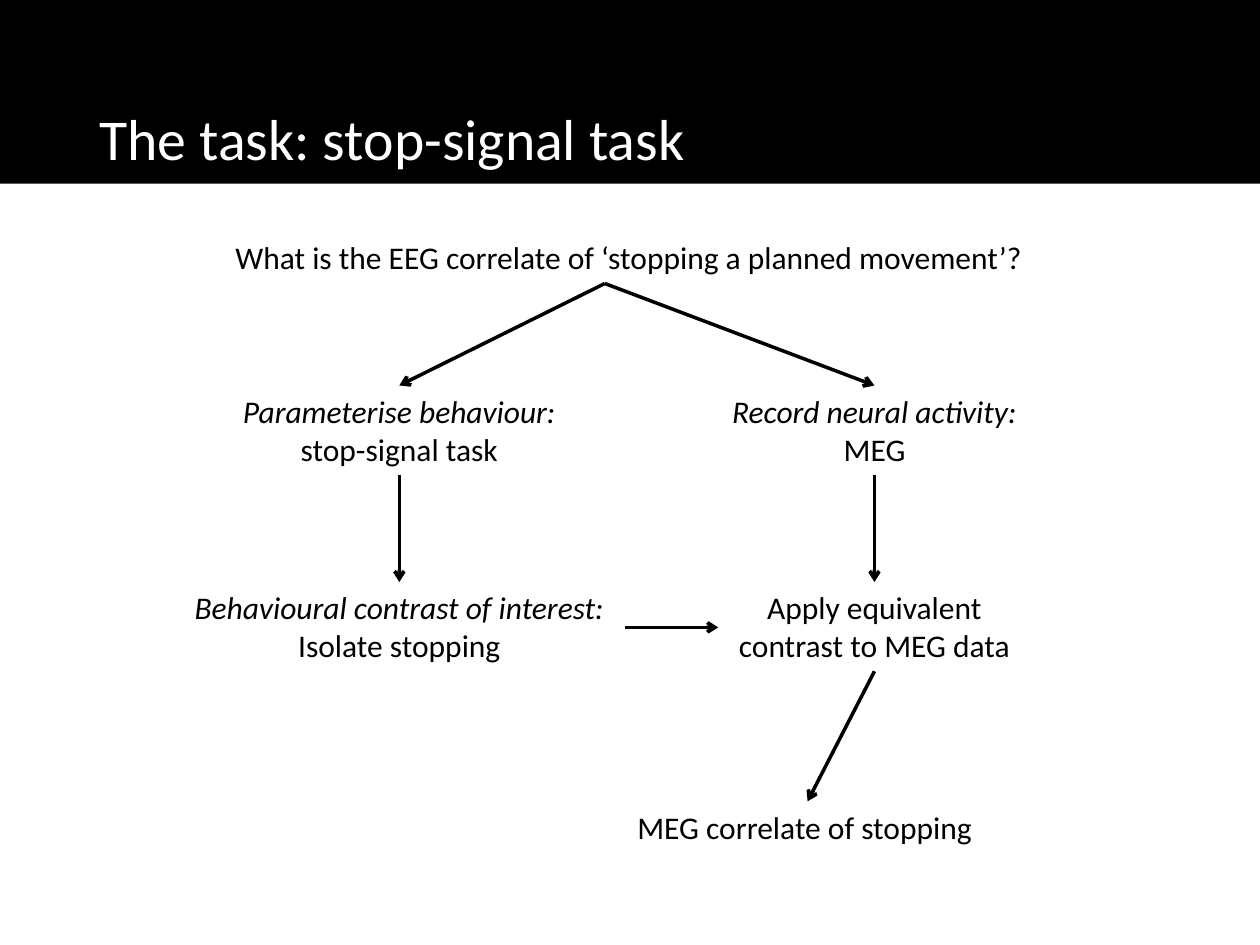
import pptx
import pptx.util
import pptx.dml.color
import pptx.enum.shapes
import pptx.enum.text
import pptx.oxml
import pptx.oxml.ns

Pt = pptx.util.Pt
ALIGN = pptx.enum.text.PP_ALIGN
COLORS = {"band": "000000", "title": "FFFFFF", "ink": "000000"}
FONT = "Calibri"

# Flow chart grid, in points
LEFT_X, RIGHT_X = 228.2, 499.7      # column centres
ROW_1, ROW_2, ROW_3 = 220.3, 332.6, 457.9   # box tops
ONE_LINE, TWO_LINES = 29, 51        # box heights


def rgb(name):
    return pptx.dml.color.RGBColor.from_string(COLORS[name])


def style_run(r, size, color, italic=None):
    r.font.name = FONT
    r.font.size = Pt(size)
    r.font.color.rgb = rgb(color)
    r.font.italic = italic


def add_band(s, width, height):
    sp = s.shapes.add_shape(
        pptx.enum.shapes.MSO_SHAPE.RECTANGLE, 0, 0, width, height)
    sp.shadow.inherit = False
    sp.fill.solid()
    sp.fill.fore_color.rgb = rgb("band")
    sp.line.fill.background()
    s.shapes._spTree.insert(2, sp._element)  # behind the title


def set_title(s, text):
    sp = s.shapes.title
    sp.left, sp.top, sp.width, sp.height = Pt(49.5), Pt(28.8), Pt(620.6), Pt(104.4)
    tf = sp.text_frame
    tf.text = text
    tf.vertical_anchor = pptx.enum.text.MSO_ANCHOR.MIDDLE
    p = tf.paragraphs[0]
    p.alignment = ALIGN.LEFT
    p.line_spacing = 0.9
    style_run(p.runs[0], 33, "title")


def add_label(s, left, top, width, lines, height=ONE_LINE, align=ALIGN.LEFT,
              wrap=False, lead_italic=False):
    sp = s.shapes.add_textbox(Pt(left), Pt(top), Pt(width), Pt(height))
    tf = sp.text_frame
    tf.text = "\n".join(lines)
    tf.word_wrap = wrap
    tf.auto_size = pptx.enum.text.MSO_AUTO_SIZE.SHAPE_TO_FIT_TEXT
    for i, p in enumerate(tf.paragraphs):
        p.alignment = align
        style_run(p.runs[0], 18, "ink", lead_italic and i == 0)


def add_step(s, center, top, width, lines):
    """Two-line box centred on its column; a single text wraps by itself."""
    pair = len(lines) == 2
    add_label(s, center - width / 2, top, width, lines, TWO_LINES,
              ALIGN.CENTER, wrap=not pair, lead_italic=pair)


def add_arrow(s, start, end):
    c = s.shapes.add_connector(
        pptx.enum.shapes.MSO_CONNECTOR.STRAIGHT, *map(Pt, start + end))
    c.line.color.rgb = rgb("ink")
    c.line.width = Pt(2)
    tail = pptx.oxml.parse_xml(
        f'<a:tailEnd {pptx.oxml.ns.nsdecls("a")} type="arrow"/>')
    c.line._get_or_add_ln().append(tail)
    c._element.spPr.append(pptx.oxml.parse_xml(
        f'<a:effectLst {pptx.oxml.ns.nsdecls("a")}/>'))


def main():
    prs = pptx.Presentation()
    prs.slide_width, prs.slide_height = Pt(720), Pt(540)
    s = prs.slides.add_slide(prs.slide_layouts[5])

    # Header
    add_band(s, prs.slide_width, Pt(105))
    set_title(s, "The task: stop-signal task")

    # Question and outcome
    add_label(s, 127.4, 132.5, 468.7,
              ["What is the EEG correlate of ‘stopping a planned movement’?"])
    add_label(s, 357.1, ROW_3, 208, ["MEG correlate of stopping"])

    # Steps
    for step in [
        (LEFT_X, ROW_1, 196, ["Parameterise behaviour:", "stop-signal task"]),
        (RIGHT_X, ROW_1, 179, ["Record neural activity:", "MEG"]),
        (LEFT_X, ROW_2, 258.5,
         ["Behavioural contrast of interest:", "Isolate stopping"]),
        (RIGHT_X, ROW_2, 198.7, ["Apply equivalent contrast to MEG data"]),
    ]:
        add_step(s, *step)

    # Arrows
    for x in (LEFT_X, RIGHT_X):
        add_arrow(s, (345.6, 162), (x, ROW_1))
        add_arrow(s, (x, ROW_1 + TWO_LINES), (x, ROW_2))
    add_arrow(s, (357.1, 358.5), (410.4, 358.5))
    add_arrow(s, (RIGHT_X, ROW_2 + TWO_LINES), (461.5, ROW_3))

    prs.save("out.pptx")


if __name__ == "__main__":
    main()
